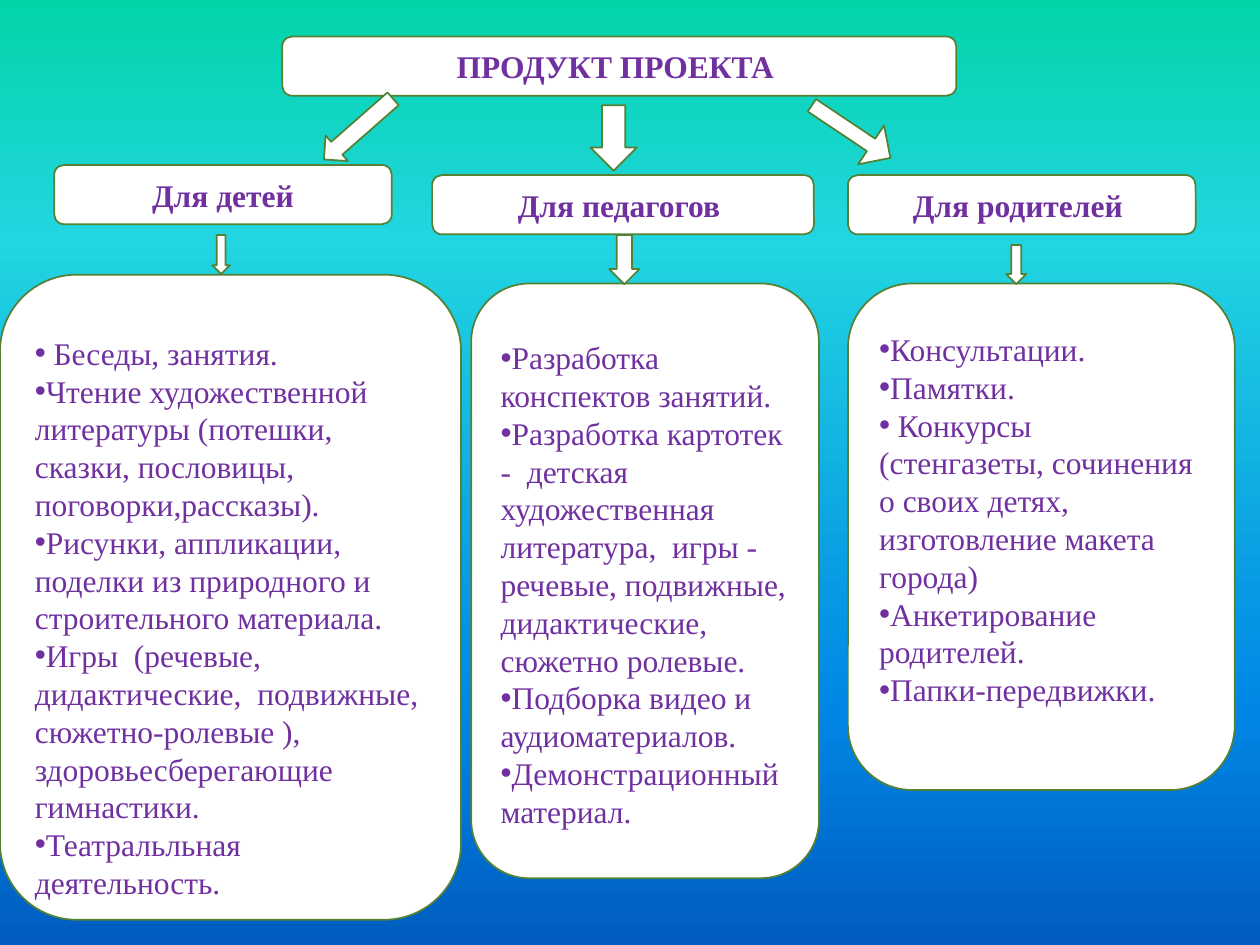
from lxml import etree
from pptx import Presentation
from pptx.dml.color import RGBColor
from pptx.enum.shapes import MSO_SHAPE as Shape
from pptx.enum.text import MSO_ANCHOR as Anchor, PP_ALIGN as Align
from pptx.oxml.ns import qn
from pptx.util import Inches, Pt

WHITE = RGBColor(0xFF, 0xFF, 0xFF)
GREEN = RGBColor(0x54, 0x82, 0x35)
PURPLE = RGBColor(0x70, 0x30, 0xA0)
SKY = [(0, RGBColor(0x03, 0xD4, 0xA8)), (25, RGBColor(0x21, 0xD6, 0xE0)),
       (75, RGBColor(0x00, 0x87, 0xE6)), (100, RGBColor(0x00, 0x5C, 0xBF))]
FONT = "Times New Roman"
HEADER_HEIGHT = 0.47
TITLE_FRAME = (2.24, 0.29, 5.35, HEADER_HEIGHT)

# Each column: header, header frame, list frame, space above the list, items
COLUMNS = [
    (" Для детей ", (0.43, 1.31, 2.68, HEADER_HEIGHT), (0, 2.18, 3.66, 5.12), 0.29, [
        " Беседы, занятия.",
        "Чтение художественной литературы (потешки, сказки, пословицы, поговорки,рассказы).",
        "Рисунки, аппликации, поделки из природного и строительного материала.",
        "Игры  (речевые, дидактические,  подвижные, сюжетно-ролевые ), "
        "здоровьесберегающие гимнастики.",
        "Театральльная деятельность."]),
    ("Для педагогов ", (3.43, 1.39, 3.03, HEADER_HEIGHT), (3.74, 2.25, 2.76, 4.72), 0.3, [
        "Разработка конспектов занятий.",
        "Разработка картотек -  детская художественная литература,  игры - "
        "речевые, подвижные, дидактические, сюжетно ролевые.",
        "Подборка видео и аудиоматериалов.",
        "Демонстрационный материал."]),
    ("Для родителей ", (6.73, 1.39, 2.76, HEADER_HEIGHT), (6.73, 2.25, 3.07, 4.02), 0.22, [
        "Консультации.",
        "Памятки.",
        " Конкурсы (стенгазеты, сочинения о своих детях, изготовление макета города)",
        "Анкетирование родителей.",
        "Папки-передвижки."]),
]

# Each arrow: frame before rotation, rotation, shaft share of the height
ARROWS = [
    ((2.48, 0.89, 0.73, 0.27), 138.7, 0.5),
    ((4.61, 0.91, 0.52, 0.37), 90, 0.5),
    ((6.38, 0.86, 0.75, 0.37), 33.8, 0.32),
    ((1.6, 1.95, 0.31, 0.14), 90, 0.5),
    ((4.76, 1.94, 0.39, 0.24), 90, 0.5),
    ((7.91, 2.02, 0.31, 0.16), 90, 0.5),
]


def paint_background(slide):
    fill = slide.background.fill
    fill.gradient()
    fill.gradient_angle = 270
    stops = slide.background._cSld.find(".//" + qn("a:gsLst"))
    for stop in list(stops):
        stops.remove(stop)
    for percent, color in SKY:
        stop = etree.SubElement(stops, qn("a:gs"), pos=str(percent * 1000))
        etree.SubElement(stop, qn("a:srgbClr"), val=str(color))


def add_outlined_shape(slide, kind, frame):
    shape = slide.shapes.add_shape(kind, *map(Inches, frame))
    shape.shadow.inherit = False
    shape.fill.solid()
    shape.fill.fore_color.rgb = WHITE
    shape.line.color.rgb = GREEN
    shape.line.width = Pt(1)
    return shape


def format_text(paragraph, alignment, bold):
    paragraph.alignment = alignment
    for run in paragraph.runs:
        run.font.name = FONT
        run.font.size = Pt(18)
        run.font.bold = bold
        run.font.color.rgb = PURPLE


def write_heading(shape, text):
    frame = shape.text_frame
    frame.text = text
    frame.word_wrap = True
    frame.vertical_anchor = Anchor.MIDDLE
    format_text(frame.paragraphs[0], Align.CENTER, True)


def add_title(slide, text):
    add_outlined_shape(slide, Shape.ROUNDED_RECTANGLE, TITLE_FRAME)
    title = slide.shapes.title
    title.left, title.top, title.width, title.height = map(Inches, TITLE_FRAME)
    write_heading(title, text)
    # The title lies above its rounded panel
    slide.shapes._spTree.append(title._element)


def add_header(slide, text, frame):
    write_heading(add_outlined_shape(slide, Shape.ROUNDED_RECTANGLE, frame), text)


def add_bullet_list(slide, frame, space_above, items):
    text_frame = add_outlined_shape(slide, Shape.ROUNDED_RECTANGLE, frame).text_frame
    text_frame.word_wrap = True
    text_frame.vertical_anchor = Anchor.TOP
    text_frame.margin_top = Inches(space_above)
    text_frame.text = "\n".join(items)
    for paragraph in text_frame.paragraphs:
        properties = paragraph._p.get_or_add_pPr()
        etree.SubElement(properties, qn("a:buFont"), typeface="Arial")
        etree.SubElement(properties, qn("a:buChar"), char="•")
        format_text(paragraph, Align.LEFT, False)


def add_arrow(slide, frame, rotation, shaft):
    arrow = add_outlined_shape(slide, Shape.RIGHT_ARROW, frame)
    arrow.rotation = rotation
    arrow.adjustments[0] = shaft


def main():
    presentation = Presentation()
    presentation.slide_width = Inches(10)
    presentation.slide_height = Inches(7.5)
    slide = presentation.slides.add_slide(presentation.slide_layouts[5])
    paint_background(slide)
    add_title(slide, "ПРОДУКТ ПРОЕКТА ")
    for header, header_frame, list_frame, space_above, items in COLUMNS:
        add_header(slide, header, header_frame)
        add_bullet_list(slide, list_frame, space_above, items)
    for arrow in ARROWS:
        add_arrow(slide, *arrow)
    presentation.save("out.pptx")


if __name__ == "__main__":
    main()
